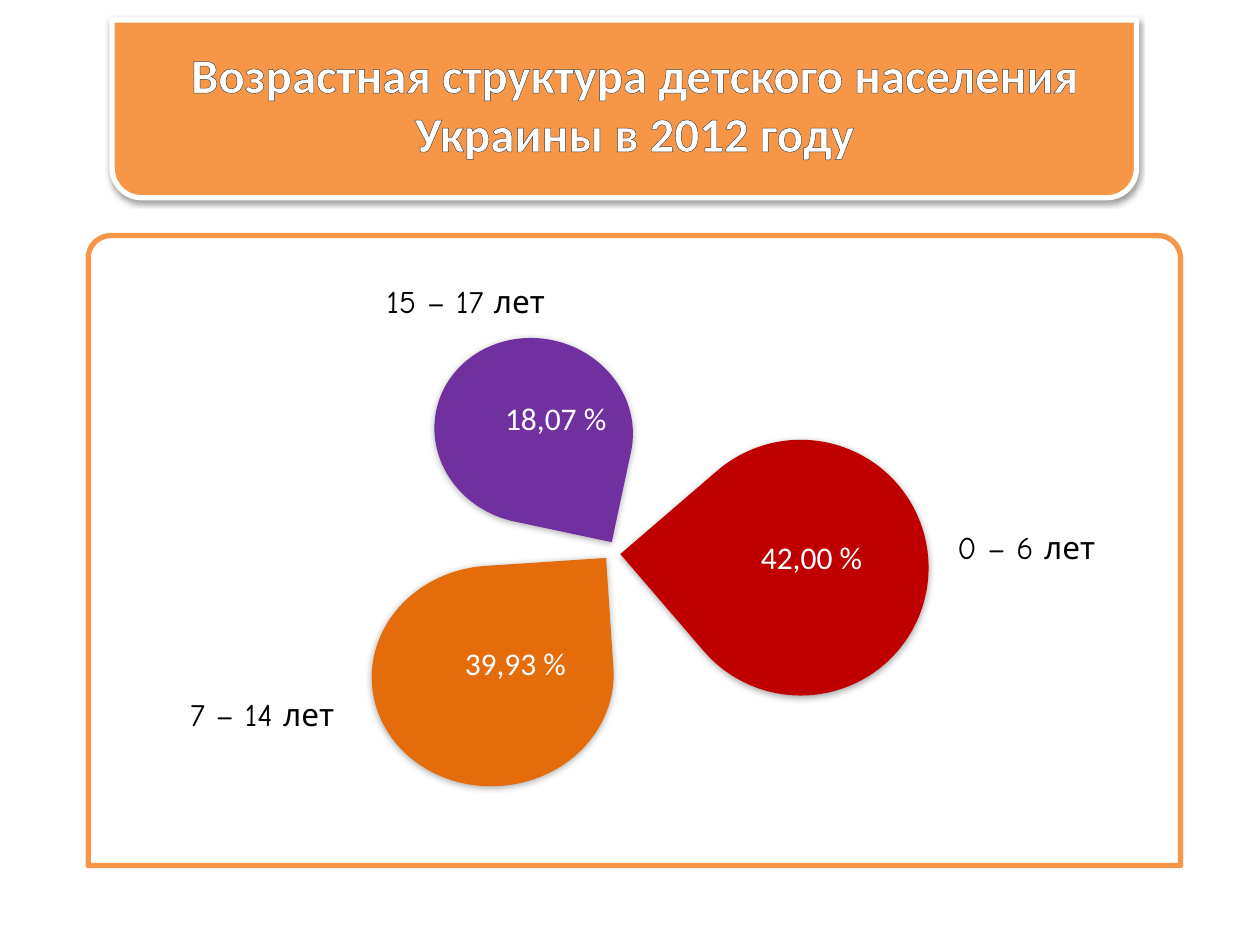
import pptx
import pptx.dml.color
import pptx.enum.shapes
import pptx.enum.text
import pptx.oxml
import pptx.oxml.ns
import pptx.util

COLUMNS, ROWS = 100, 75
SLIDE_WIDTH, SLIDE_HEIGHT = pptx.util.Inches(10), pptx.util.Inches(7.5)
SHAPES = pptx.enum.shapes.MSO_SHAPE
ALIGN = pptx.enum.text.PP_ALIGN

ORANGE, WHITE, BLACK = "F79646", "FFFFFF", "000000"
TITLE_FORMAT = {"size": pptx.util.Pt(28), "name": "Calibri", "bold": True}
VALUE_FORMAT = {"size": pptx.util.Pt(18), "name": "Calibri"}
LABEL_FORMAT = {"size": pptx.util.Pt(18), "name": "Comic Neue"}
BANNER_SHADOW = {"opacity": 38, "blur": 3.1, "distance": 1.6}
PETAL_SHADOW = {"opacity": 32, "blur": 4, "distance": 1}

AGE_GROUPS = [
    {"color": "C00000", "rotation": 229.3, "petal": (46.4, 16.2, 20.3, 20.3),
     "value": ("42,00 %", (52.4, 23.5, 10.9, 4)),
     "label": ("0 – 6 лет", (68, 22.7, 13.3, 4))},
    {"color": "7030A0", "rotation": 102, "petal": (28, 7.6, 14.7, 15.8),
     "value": ("18,07 %", (32.1, 12.5, 10.9, 4)),
     "label": ("15 – 17 лет", (22.7, 3.2, 16.4, 4))},
    {"color": "E46C0A", "rotation": 356.2, "petal": (22.5, 26.2, 19.2, 17.5),
     "value": ("39,93 %", (28.9, 31.9, 10.9, 4)),
     "label": ("7 – 14 лет", (7.1, 36, 14.8, 4))},
]


def rgb(color):
    return pptx.dml.color.RGBColor.from_string(color)


def grid(box):
    left, top, width, height = box
    column, row = SLIDE_WIDTH / COLUMNS, SLIDE_HEIGHT / ROWS
    return [round(length) for length in
            (left * column, top * row, width * column, height * row)]


def inside(box, part):
    return box[0] + part[0], box[1] + part[1], part[2], part[3]


def add_shadow(shape, opacity, blur, distance):
    shape.element.spPr.append(pptx.oxml.parse_xml(
        f'<a:effectLst {pptx.oxml.ns.nsdecls("a")}>'
        f'<a:outerShdw blurRad="{pptx.util.Pt(blur)}" dist="{pptx.util.Pt(distance)}" '
        f'dir="5400000" rotWithShape="0"><a:srgbClr val="{BLACK}">'
        f'<a:alpha val="{opacity * 1000}"/></a:srgbClr></a:outerShdw></a:effectLst>'))


def add_figure(slide, kind, box, fill, line=None, shadow=None):
    shape = slide.shapes.add_shape(kind, *grid(box))
    shape.fill.solid()
    shape.fill.fore_color.rgb = rgb(fill)
    if line:
        shape.line.color.rgb = rgb(line)
        shape.line.width = pptx.util.Pt(3)
    else:
        shape.line.fill.background()
    if shadow:
        add_shadow(shape, **shadow)
    else:
        shape.shadow.inherit = False
    return shape


def add_text(slide, box, text, color, text_format, frame_format=None, align=ALIGN.LEFT):
    frame = slide.shapes.add_textbox(*grid(box)).text_frame
    frame.word_wrap = True
    frame.auto_size = pptx.enum.text.MSO_AUTO_SIZE.SHAPE_TO_FIT_TEXT
    for name, value in (frame_format or {}).items():
        setattr(frame, name, value)
    paragraph = frame.paragraphs[0]
    paragraph.alignment = align
    run = paragraph.add_run()
    run.text = text
    for name, value in text_format.items():
        setattr(run.font, name, value)
    run.font.color.rgb = rgb(color)
    return run


def outline_text(run, color, width):
    run.font.fill
    run._r.get_or_add_rPr().insert(0, pptx.oxml.parse_xml(
        f'<a:ln {pptx.oxml.ns.nsdecls("a")} w="{pptx.util.Pt(width)}">'
        f'<a:solidFill><a:srgbClr val="{color}"/></a:solidFill></a:ln>'))


def add_banner(slide, box):
    banner = add_figure(slide, SHAPES.ROUND_2_SAME_RECTANGLE, box, ORANGE,
                        WHITE, BANNER_SHADOW)
    banner.element.spPr.get_or_add_xfrm().set("flipV", "1")
    margins = {f"margin_{side}": pptx.util.Inches(0.04)
               for side in ("left", "top", "right", "bottom")}
    title = add_text(slide, inside(box, (2.8, 1.5, 77.3, 10.2)),
                     "Возрастная структура детского населения Украины в 2012 году",
                     WHITE, TITLE_FORMAT, margins, ALIGN.CENTER)
    outline_text(title, "404040", 1.45)


def add_age_panel(slide, box):
    panel = add_figure(slide, SHAPES.ROUND_2_SAME_RECTANGLE, box, WHITE, ORANGE)
    panel.adjustments[0] = 0.036
    for group in AGE_GROUPS:
        petal = add_figure(slide, SHAPES.TEAR, inside(box, group["petal"]),
                           group["color"], shadow=PETAL_SHADOW)
        petal.rotation = group["rotation"]
        for part, color, text_format in (("value", WHITE, VALUE_FORMAT),
                                         ("label", BLACK, LABEL_FORMAT)):
            text, place = group[part]
            add_text(slide, inside(box, place), text, color, text_format)


def main():
    presentation = pptx.Presentation()
    presentation.slide_width = SLIDE_WIDTH
    presentation.slide_height = SLIDE_HEIGHT
    slide = presentation.slides.add_slide(presentation.slide_layouts[6])
    add_age_panel(slide, (7, 18.7, 86.7, 50))
    add_banner(slide, (8.9, 1.6, 81.3, 14.1))
    presentation.save("out.pptx")


if __name__ == "__main__":
    main()
